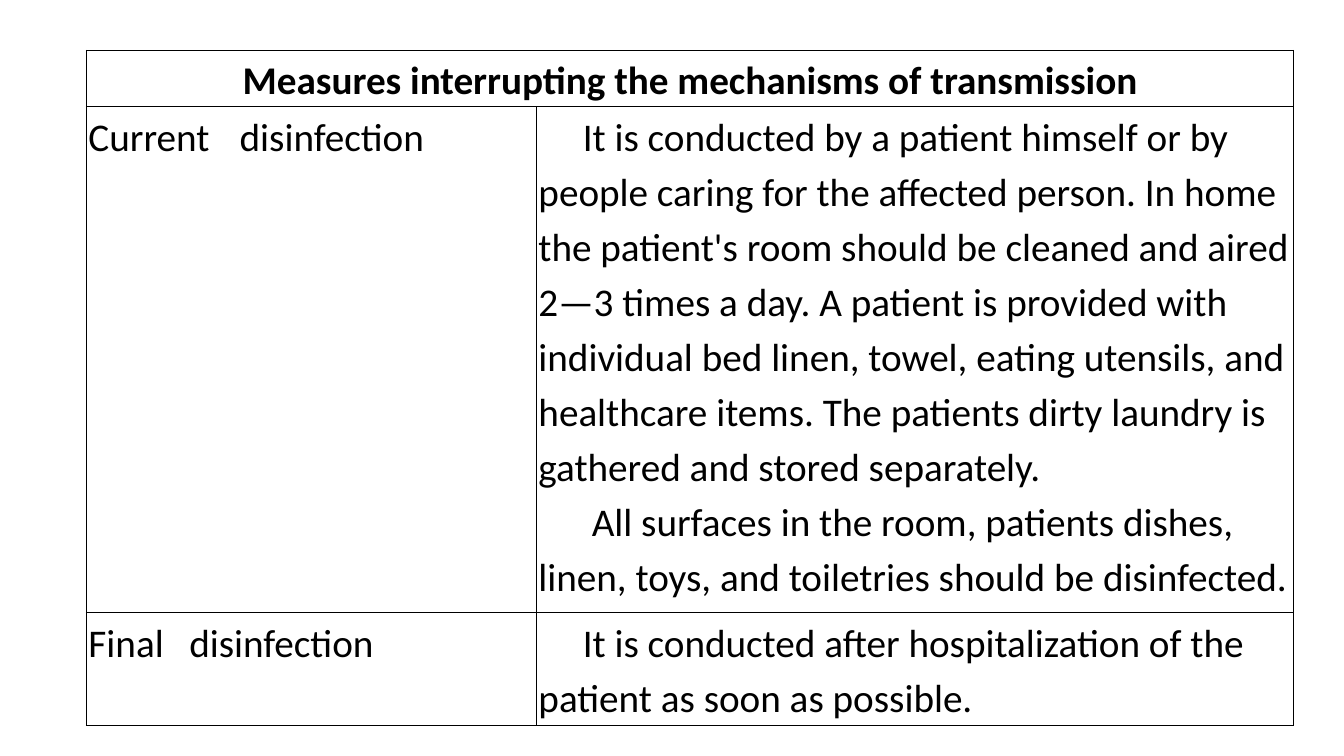
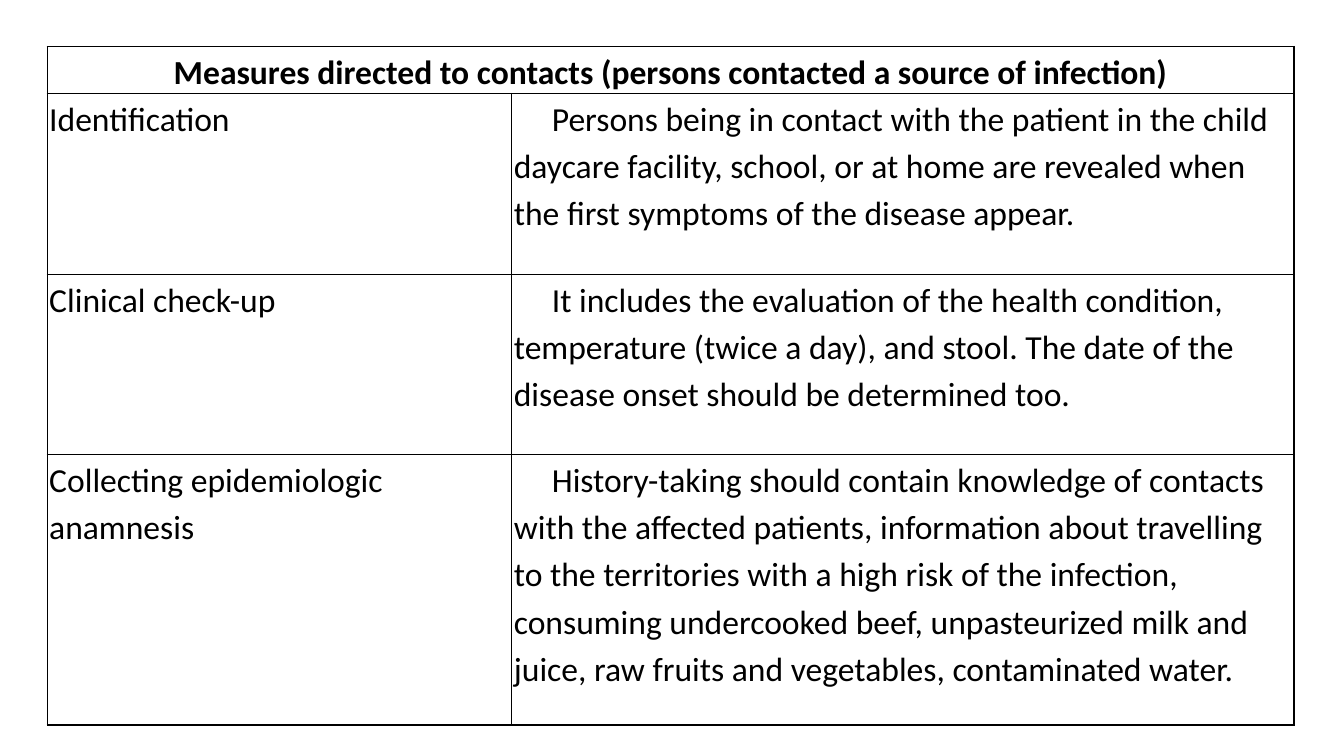
from dataclasses import dataclass

from lxml.etree import SubElement
from pptx import Presentation
from pptx.dml.color import RGBColor
from pptx.enum.text import PP_ALIGN as Align
from pptx.oxml.ns import qn
from pptx.util import Cm, Pt

COLORS = {"text": "000000", "border": "000000"}
FONT = {"name": "Calibri"}
CELL_FORMAT = {"margin_left": Cm(0.05), "margin_right": Cm(0.05),
               "margin_top": 0, "margin_bottom": 0}
TABLE_FORMAT = {"first_row": False, "horz_banding": False}
BORDER_SIDES = ("lnL", "lnR", "lnT", "lnB")
BORDER_WIDTH = Pt(1)


@dataclass
class Entry:
    """A paragraph; indent is in ems, tab in centimetres."""
    text: str
    indent: float = 0
    tab: float = 0


def body(text, indent=1.13):
    return Entry(text, indent=indent)


def set_attributes(target, values):
    for name, value in values.items():
        setattr(target, name, value)


def add_borders(cell):
    properties = cell._tc.get_or_add_tcPr()
    for side in BORDER_SIDES:
        line = SubElement(properties, qn(f"a:{side}"), w=str(BORDER_WIDTH))
        fill = SubElement(line, qn("a:solidFill"))
        SubElement(fill, qn("a:srgbClr"), val=COLORS["border"])


def write_paragraph(paragraph, entry, size, bold, alignment):
    properties = paragraph._p.get_or_add_pPr()
    properties.set("marL", "0")
    properties.set("indent", str(Pt(entry.indent * size)))
    if entry.tab:
        tabs = SubElement(properties, qn("a:tabLst"))
        SubElement(tabs, qn("a:tab"), pos=str(Cm(entry.tab)), algn="l")
    set_attributes(paragraph, {"alignment": alignment, "line_spacing": 1.15})
    run = paragraph.add_run()
    run.text = entry.text
    set_attributes(run.font, {**FONT, "size": Pt(size), "bold": bold})
    run.font.color.rgb = RGBColor.from_string(COLORS["text"])


def fill_cell(cell, entries, size, bold=False, alignment=Align.LEFT):
    set_attributes(cell, CELL_FORMAT)
    frame = cell.text_frame
    for number, entry in enumerate(entries):
        paragraph = frame.add_paragraph() if number else frame.paragraphs[0]
        write_paragraph(paragraph, entry, size, bold, alignment)


def add_measures_table(slide, left, top, columns, heights, size, title, rows):
    """Title row across both columns, then one row per measure."""
    frame = slide.shapes.add_table(len(heights), len(columns), Cm(left), Cm(top),
                                   Cm(sum(columns)), Cm(sum(heights)))
    table = frame.table
    set_attributes(table, TABLE_FORMAT)
    for column, width in zip(table.columns, columns):
        column.width = Cm(width)
    for row, height in zip(table.rows, heights):
        row.height = Cm(height)
    for cell in table.iter_cells():
        add_borders(cell)
        cell.fill.background()

    # Title row
    table.cell(0, 0).merge(table.cell(0, 1))
    fill_cell(table.cell(0, 0), [Entry(title)], size, True, Align.CENTER)

    # Measures and their descriptions
    for number, (measure, description) in enumerate(rows, start=1):
        fill_cell(table.cell(number, 0), [measure], size)
        fill_cell(table.cell(number, 1), description, size)


TABLES = [
    {
        "left": 2.18, "top": 1.27, "size": 28,
        "columns": (11.34, 19.08), "heights": (1.42, 12.75, 2.84),
        "title": "Measures interrupting the mechanisms of transmission",
        "rows": [
            (Entry("Current\tdisinfection", tab=3.73), [
                body("It is conducted by a patient himself or by people caring for "
                     "the affected person. In home the patient's room should be "
                     "cleaned and aired 2—3 times a day. A patient is provided with "
                     "individual bed linen, towel, eating utensils, and healthcare "
                     "items. The patients dirty laundry is gathered and stored "
                     "separately."),
                body("All surfaces in the room, patients dishes, linen, toys, and "
                     "toiletries should be disinfected.", indent=1.36)]),
            (Entry("Final\tdisinfection", tab=2.57), [
                body("It is conducted after hospitalization of the patient as soon "
                     "as possible.")]),
        ],
    },
    {
        "left": 1.19, "top": 1.17, "size": 24,
        "columns": (11.71, 19.71), "heights": (1.14, 4.55, 4.55, 6.81),
        "title": "Measures directed to contacts (persons contacted a source of "
                 "infection)",
        "rows": [
            (Entry("Identification"), [
                body("Persons being in contact with the patient in the child daycare "
                     "facility, school, or at home are revealed when the first "
                     "symptoms of the disease appear.")]),
            (Entry("Clinical check-up"), [
                body("It includes the evaluation of the health condition, "
                     "temperature (twice a day), and stool. The date of the disease "
                     "onset should be determined too.")]),
            (Entry("Collecting epidemiologic anamnesis"), [
                body("History-taking should contain knowledge of contacts with the "
                     "affected patients, information about travelling to the "
                     "territories with a high risk of the infection, consuming "
                     "undercooked beef, unpasteurized milk and juice, raw fruits and "
                     "vegetables, contaminated water.")]),
        ],
    },
]


def main():
    presentation = Presentation()
    set_attributes(presentation, {"slide_width": Cm(33.87),
                                  "slide_height": Cm(19.05)})
    for content in TABLES:
        slide = presentation.slides.add_slide(presentation.slide_layouts[6])
        add_measures_table(slide, **content)
    presentation.save("out.pptx")


if __name__ == "__main__":
    main()
